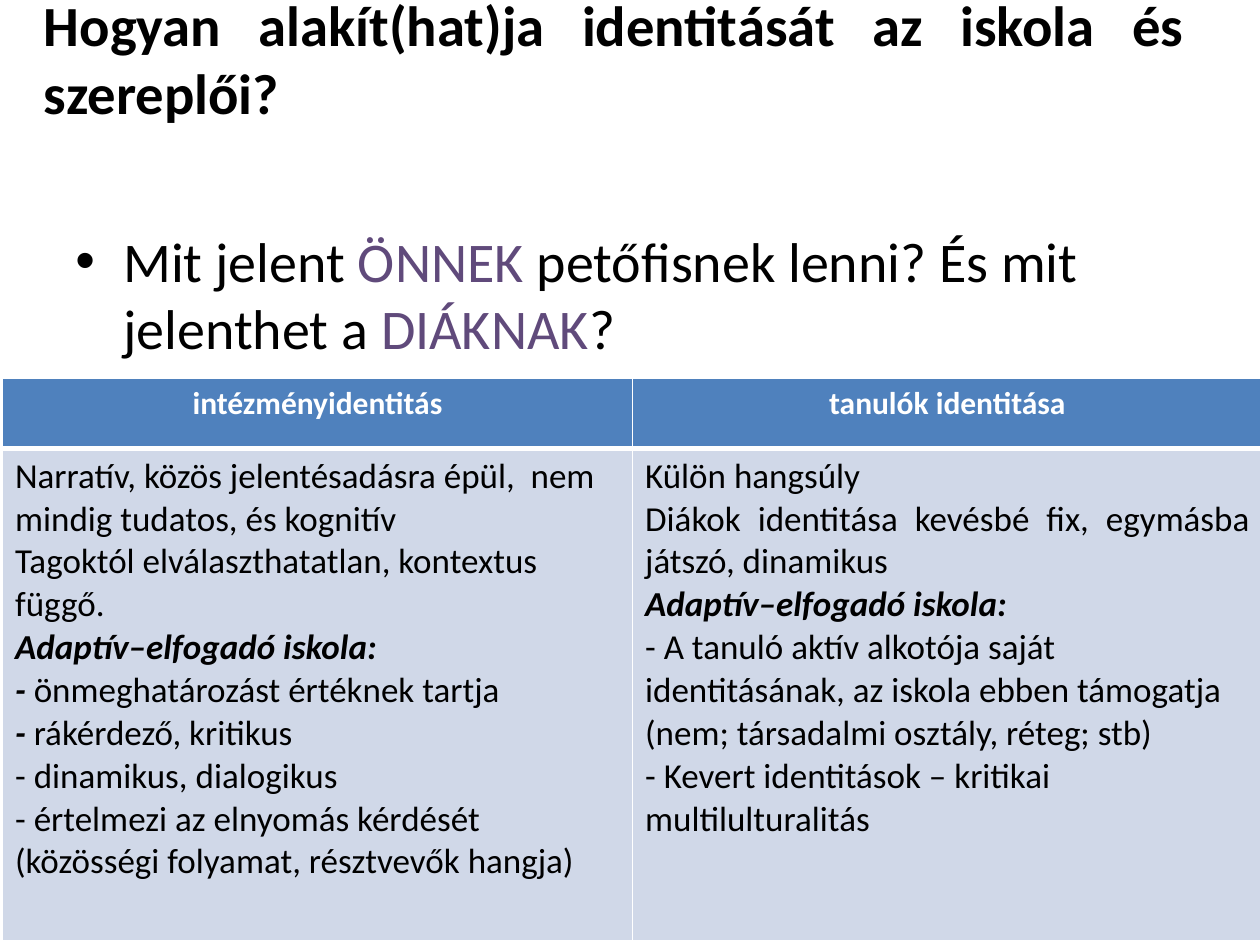
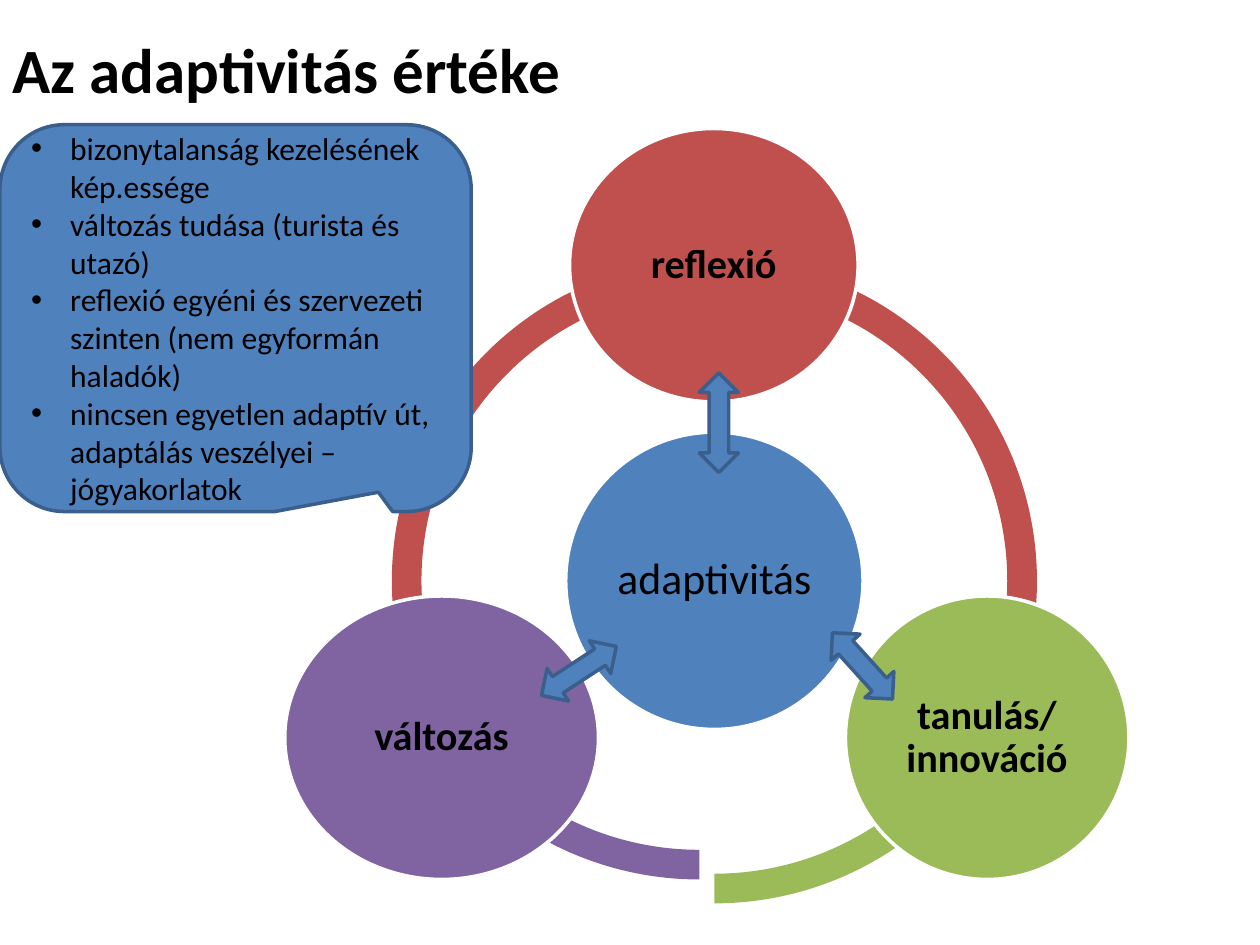
from lxml.etree import SubElement
from pptx import Presentation
from pptx.dml.color import RGBColor
from pptx.enum.shapes import MSO_SHAPE
from pptx.enum.text import MSO_ANCHOR, PP_ALIGN
from pptx.oxml import parse_xml
from pptx.oxml.ns import nsdecls, qn
from pptx.util import Inches, Pt

FONT = "Calibri"
BLACK = RGBColor(0x00, 0x00, 0x00)
WHITE = RGBColor(0xFF, 0xFF, 0xFF)
BLUE = RGBColor(0x4F, 0x81, 0xBD)
DARK_BLUE = RGBColor(0x3A, 0x5F, 0x8C)
PALE_BLUE = RGBColor(0xD0, 0xD8, 0xE8)
RED = RGBColor(0xC0, 0x50, 0x4D)
GREEN = RGBColor(0x9B, 0xBB, 0x59)
PURPLE = RGBColor(0x80, 0x64, 0xA2)
DARK_PURPLE = RGBColor(0x60, 0x4A, 0x7B)


def write(p, text, size, color=BLACK, bold=False, italic=False):
    """Add text to a paragraph; a newline becomes a line break."""
    for i, line in enumerate(text.split("\n")):
        if i:
            p.add_line_break()
        r = p.add_run()
        r.text = line
        f = r.font
        f.name, f.size, f.bold, f.italic = FONT, Pt(size), bold, italic
        f.color.rgb = color


def set_bullet(p, indent):
    pPr = p._p.get_or_add_pPr()
    pPr.set("marL", str(Inches(indent)))
    pPr.set("indent", str(-Inches(indent)))
    SubElement(pPr, qn("a:buFont"), typeface="Arial")
    SubElement(pPr, qn("a:buChar"), char="•")


prs = Presentation()
prs.slide_width, prs.slide_height = Inches(10), Inches(7.5)

# Both slides with their titles
TITLES = [
    ("Hogyan alakít(hat)ja identitását az iskola és szereplői? ",
     32.4, PP_ALIGN.JUSTIFY, (0.25, 0, 9.25, 0.92)),
    ("Az adaptivitás értéke", 36, PP_ALIGN.LEFT, (0, 0, 8.2, 1.09)),
]
slides = []
for title, size, align, box in TITLES:
    s = prs.slides.add_slide(prs.slide_layouts[6])
    tf = s.shapes.add_textbox(*map(Inches, box)).text_frame
    tf.word_wrap = True
    tf.vertical_anchor = MSO_ANCHOR.MIDDLE
    p = tf.paragraphs[0]
    p.alignment = align
    write(p, title, size, bold=True)
    slides.append(s)
identity, adaptivity = slides

# Slide 1: table of the two identities
HEADERS = ["intézményidentitás", "tanulók identitása"]
ADAPTIVE = [("Adaptív–elfogadó iskola:", True)]
# Each paragraph is a list of (text, emphasised) runs
INSTITUTION = [
    [("Narratív, közös jelentésadásra épül,  nem mindig tudatos, és kognitív", False)],
    [("Tagoktól elválaszthatatlan, kontextus függő.", False)],
    ADAPTIVE,
    [("- ", True), ("önmeghatározást értéknek tartja", False)],
    [("- ", True), ("rákérdező, kritikus", False)],
    [("- dinamikus, dialogikus", False)],
    [("- értelmezi az elnyomás kérdését (közösségi folyamat, résztvevők hangja)", False)],
]
STUDENTS = [
    [("Külön hangsúly ", False)],
    [("Diákok identitása kevésbé fix, egymásba játszó, dinamikus", False)],
    ADAPTIVE,
    [("- A tanuló aktív alkotója saját identitásának, az iskola ebben támogatja "
      "(nem; társadalmi osztály, réteg; stb)", False)],
    [("- Kevert identitások – kritikai multilulturalitás", False)],
]
table = identity.shapes.add_table(
    2, 2, Inches(0.02), Inches(3), Inches(10), Inches(4.47)).table
table.horz_banding = False
table.rows[0].height, table.rows[1].height = Inches(0.56), Inches(3.91)

for col, header in enumerate(HEADERS):
    p = table.cell(0, col).text_frame.paragraphs[0]
    p.alignment = PP_ALIGN.CENTER
    write(p, header, 18, WHITE, bold=True)

for col, paragraphs in enumerate([INSTITUTION, STUDENTS]):
    tf = table.cell(1, col).text_frame
    for i, runs in enumerate(paragraphs):
        p = tf.add_paragraph() if i else tf.paragraphs[0]
        justified = paragraphs is STUDENTS and i < 2
        p.alignment = PP_ALIGN.JUSTIFY if justified else PP_ALIGN.LEFT
        for text, strong in runs:
            write(p, text, 20, bold=strong, italic=strong)

# The rule under the header is thicker than the other borders
for row, (fill, top, bottom) in enumerate([(BLUE, 1, 3), (PALE_BLUE, 3, 1)]):
    for cell in table.rows[row].cells:
        cell.fill.solid()
        cell.fill.fore_color.rgb = fill
        tcPr = cell._tc.get_or_add_tcPr()
        for i, (side, width) in enumerate(zip("LRTB", (1, 1, top, bottom))):
            tcPr.insert(i, parse_xml(
                f'<a:ln{side} {nsdecls("a")} w="{Pt(width)}"><a:solidFill>'
                f'<a:srgbClr val="{WHITE}"/></a:solidFill></a:ln{side}>'))

# Slide 1: question above the table
tf = identity.shapes.add_textbox(
    Inches(0.5), Inches(1.75), Inches(9), Inches(1.08)).text_frame
tf.word_wrap = True
p = tf.paragraphs[0]
p.space_before = Pt(6.4)
set_bullet(p, 0.38)
for text, color in [("Mit jelent ", BLACK), ("ÖNNEK ", DARK_PURPLE),
                    ("petőfisnek lenni? És mit jelenthet a ", BLACK),
                    ("DIÁKNAK", DARK_PURPLE), ("?", BLACK)]:
    write(p, text, 32, color)

# Slide 2: ring of three arcs, angles in degrees
for left, top, start, end, color in [(2.99, 1.86, 90, 162, PURPLE),
                                     (3.11, 2.05, 18, 90, GREEN),
                                     (3.11, 2.05, 162, 18, RED)]:
    sp = adaptivity.shapes.add_shape(
        MSO_SHAPE.BLOCK_ARC, Inches(left), Inches(top), Inches(5.12), Inches(5.12))
    sp.shadow.inherit = False
    # Adjustments count 100000 units, angles 60000 to the degree
    sp.adjustments[0] = start * 0.6
    sp.adjustments[1] = end * 0.6
    sp.adjustments[2] = 0.046
    sp.fill.solid()
    sp.fill.fore_color.rgb = color
    sp.line.fill.background()

# Slide 2: centre and the three circles around it
for text, size, bold, color, box in [
    ("adaptivitás", 25, False, BLUE, (4.49, 3.43, 2.36, 2.36)),
    ("reflexió", 23, True, RED, (4.52, 1.02, 2.29, 2.17)),
    ("tanulás/\ninnováció", 23, True, GREEN, (6.71, 4.73, 2.25, 2.25)),
    ("változás", 23, True, PURPLE, (2.26, 4.73, 2.49, 2.25)),
]:
    sp = adaptivity.shapes.add_shape(MSO_SHAPE.OVAL, *map(Inches, box))
    sp.shadow.inherit = False
    sp.fill.solid()
    sp.fill.fore_color.rgb = color
    sp.line.color.rgb = WHITE
    sp.line.width = Pt(2)
    tf = sp.text_frame
    tf.word_wrap = True
    tf.vertical_anchor = MSO_ANCHOR.MIDDLE
    tf.margin_left = tf.margin_right = tf.margin_top = tf.margin_bottom = Inches(0.03)
    p = tf.paragraphs[0]
    p.alignment = PP_ALIGN.CENTER
    p.line_spacing = 0.9
    write(p, text, size, bold=bold)

# Slide 2: double arrows and the callout share one outline
for kind, box, rotation in [
    (MSO_SHAPE.UP_DOWN_ARROW, (5.55, 2.96, 0.31, 0.79), 0),
    (MSO_SHAPE.LEFT_RIGHT_ARROW, (4.24, 5.17, 0.71, 0.31), 326.8),
    (MSO_SHAPE.LEFT_RIGHT_ARROW, (6.49, 5.13, 0.71, 0.31), 227.8),
    (MSO_SHAPE.ROUNDED_RECTANGULAR_CALLOUT, (0, 0.99, 3.74, 3.07), 0),
]:
    sp = adaptivity.shapes.add_shape(kind, *map(Inches, box))
    sp.shadow.inherit = False
    sp.rotation = rotation
    sp.fill.solid()
    sp.fill.fore_color.rgb = BLUE
    sp.line.color.rgb = DARK_BLUE
    sp.line.width = Pt(2)

callout = sp
callout.adjustments[0] = 0.303
callout.adjustments[1] = 0.45
tf = callout.text_frame
tf.word_wrap = True
tf.vertical_anchor = MSO_ANCHOR.MIDDLE
for i, text in enumerate([
    "bizonytalanság kezelésének kép.essége",
    "változás tudása (turista és utazó)",
    "reflexió egyéni és szervezeti szinten (nem egyformán haladók)",
    "nincsen egyetlen adaptív út, \nadaptálás veszélyei – jógyakorlatok",
]):
    p = tf.add_paragraph() if i else tf.paragraphs[0]
    p.alignment = PP_ALIGN.LEFT
    set_bullet(p, 0.31)
    write(p, text, 18)

prs.save("out.pptx")
